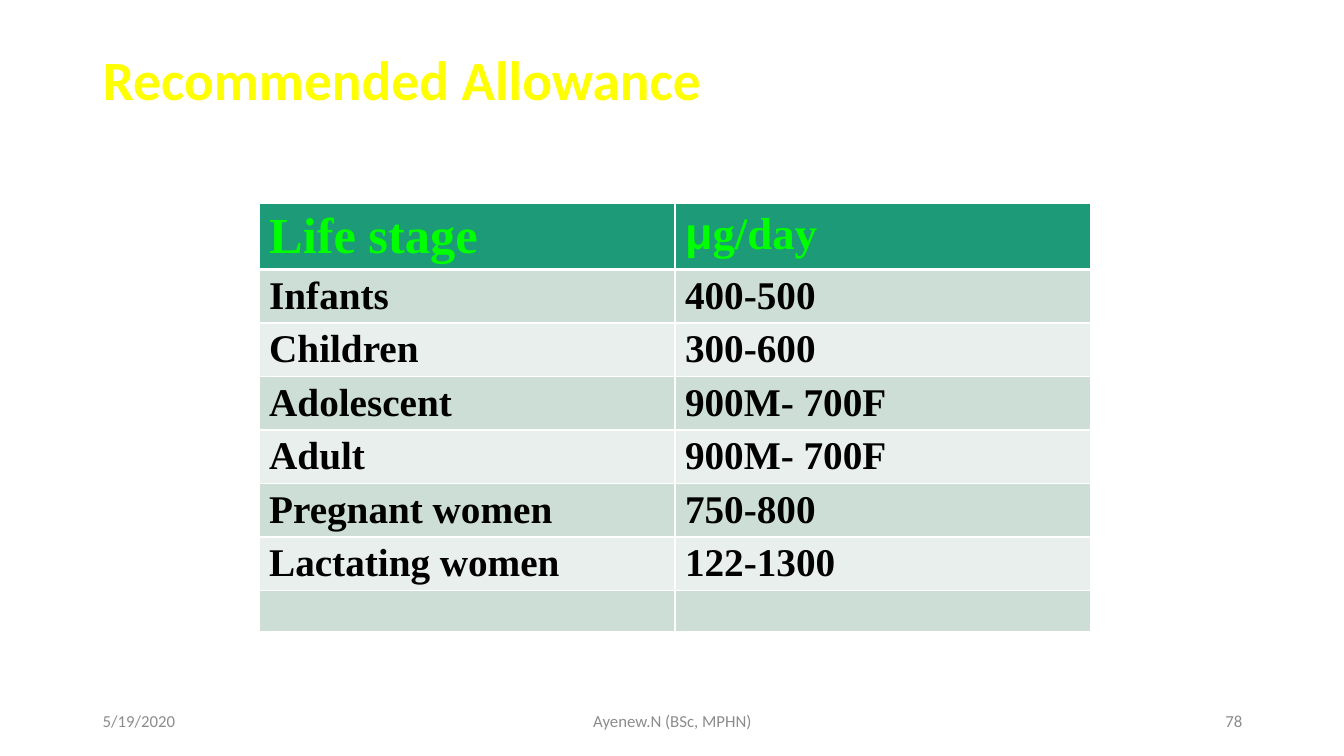
from lxml.etree import SubElement
from pptx import Presentation
from pptx.dml.color import RGBColor
from pptx.enum.text import MSO_ANCHOR, MSO_AUTO_SIZE, PP_ALIGN
from pptx.oxml.ns import qn
from pptx.util import Inches, Pt

YELLOW = RGBColor(0xFF, 0xFF, 0x00)
LIME = RGBColor(0x00, 0xFF, 0x00)
BLACK = RGBColor(0x00, 0x00, 0x00)
GRAY = RGBColor(0x8C, 0x8C, 0x8C)
WHITE = RGBColor(0xFF, 0xFF, 0xFF)
HEADER_GREEN = RGBColor(0x1D, 0x9A, 0x78)
BANDS = (RGBColor(0xCD, 0xDE, 0xD6), RGBColor(0xE8, 0xEF, 0xEC))

SANS = "Calibri"
SERIF = "Times New Roman"
SYMBOL = "Arial"

HEADER = (
    (("Life stage", 36, SERIF),),
    (("μ", 32, SYMBOL), ("g/day", 32, SERIF)),
)
ALLOWANCES = (
    ("Infants", "400-500"),
    ("Children", "300-600"),
    ("Adolescent", "900M- 700F"),
    ("Adult", "900M- 700F"),
    ("Pregnant women", "750-800"),
    ("Lactating women", "122-1300"),
    ("", ""),
)


class AllowanceSlide:
    def __init__(self, prs):
        self.slide = prs.slides.add_slide(prs.slide_layouts[5])

    def add_run(self, paragraph, text, size, font, color, bold=False):
        run = paragraph.add_run()
        run.text = text
        run.font.size = Pt(size)
        run.font.name = font
        run.font.bold = bold
        run.font.color.rgb = color

    def add_title(self, text):
        title = self.slide.shapes.title
        title.left, title.top = Inches(0.92), Inches(0.4)
        title.width, title.height = Inches(11.5), Inches(1.45)
        frame = title.text_frame
        frame.auto_size = MSO_AUTO_SIZE.NONE
        frame.vertical_anchor = MSO_ANCHOR.TOP
        frame.margin_top = Inches(0.12)
        paragraph = frame.paragraphs[0]
        paragraph.alignment = PP_ALIGN.LEFT
        paragraph.line_spacing = 0.9
        self.add_run(paragraph, text, 39.6, SANS, YELLOW, bold=True)

    def add_footer(self, text, left, width, alignment):
        box = self.slide.shapes.add_textbox(
            Inches(left), Inches(6.95), Inches(width), Inches(0.4))
        frame = box.text_frame
        frame.word_wrap = True
        frame.vertical_anchor = MSO_ANCHOR.MIDDLE
        paragraph = frame.paragraphs[0]
        paragraph.alignment = alignment
        self.add_run(paragraph, text, 12, SANS, GRAY)

    def fill_cell(self, cell, runs, text_color, fill, bottom_width=1):
        self.add_borders(cell, bottom_width)
        cell.fill.solid()
        cell.fill.fore_color.rgb = fill
        for text, size, font in runs:
            self.add_run(cell.text_frame.paragraphs[0], text, size, font,
                         text_color, bold=True)

    def add_borders(self, cell, bottom_width):
        properties = cell._tc.get_or_add_tcPr()
        widths = {"lnL": 1, "lnR": 1, "lnT": 1, "lnB": bottom_width}
        for side, width in widths.items():
            line = SubElement(properties, qn(f"a:{side}"), w=str(Pt(width)))
            solid = SubElement(line, qn("a:solidFill"))
            SubElement(solid, qn("a:srgbClr"), val=str(WHITE))

    def add_table(self, header, body):
        table = self.slide.shapes.add_table(
            len(body) + 1, len(header), Inches(2.57), Inches(2.02),
            Inches(8.25), Inches(4.24)).table
        heights = [0.65] + [0.53] * (len(body) - 1) + [0.41]
        for row, height in zip(table.rows, heights):
            row.height = Inches(height)
        for column, runs in enumerate(header):
            self.fill_cell(table.cell(0, column), runs, LIME, HEADER_GREEN,
                           bottom_width=3)
        for index, texts in enumerate(body):
            for column, text in enumerate(texts):
                runs = [(text, 28, SERIF)] if text else []
                self.fill_cell(table.cell(index + 1, column), runs, BLACK,
                               BANDS[index % 2])


def main():
    prs = Presentation()
    prs.slide_width, prs.slide_height = Inches(13.33), Inches(7.5)
    page = AllowanceSlide(prs)
    page.add_title("Recommended Allowance")
    page.add_table(HEADER, ALLOWANCES)
    page.add_footer("5/19/2020", 0.92, 3, PP_ALIGN.LEFT)
    page.add_footer("Ayenew.N (BSc, MPHN)", 4.42, 4.5, PP_ALIGN.CENTER)
    page.add_footer("78", 9.42, 3, PP_ALIGN.RIGHT)
    prs.save("out.pptx")


if __name__ == "__main__":
    main()
